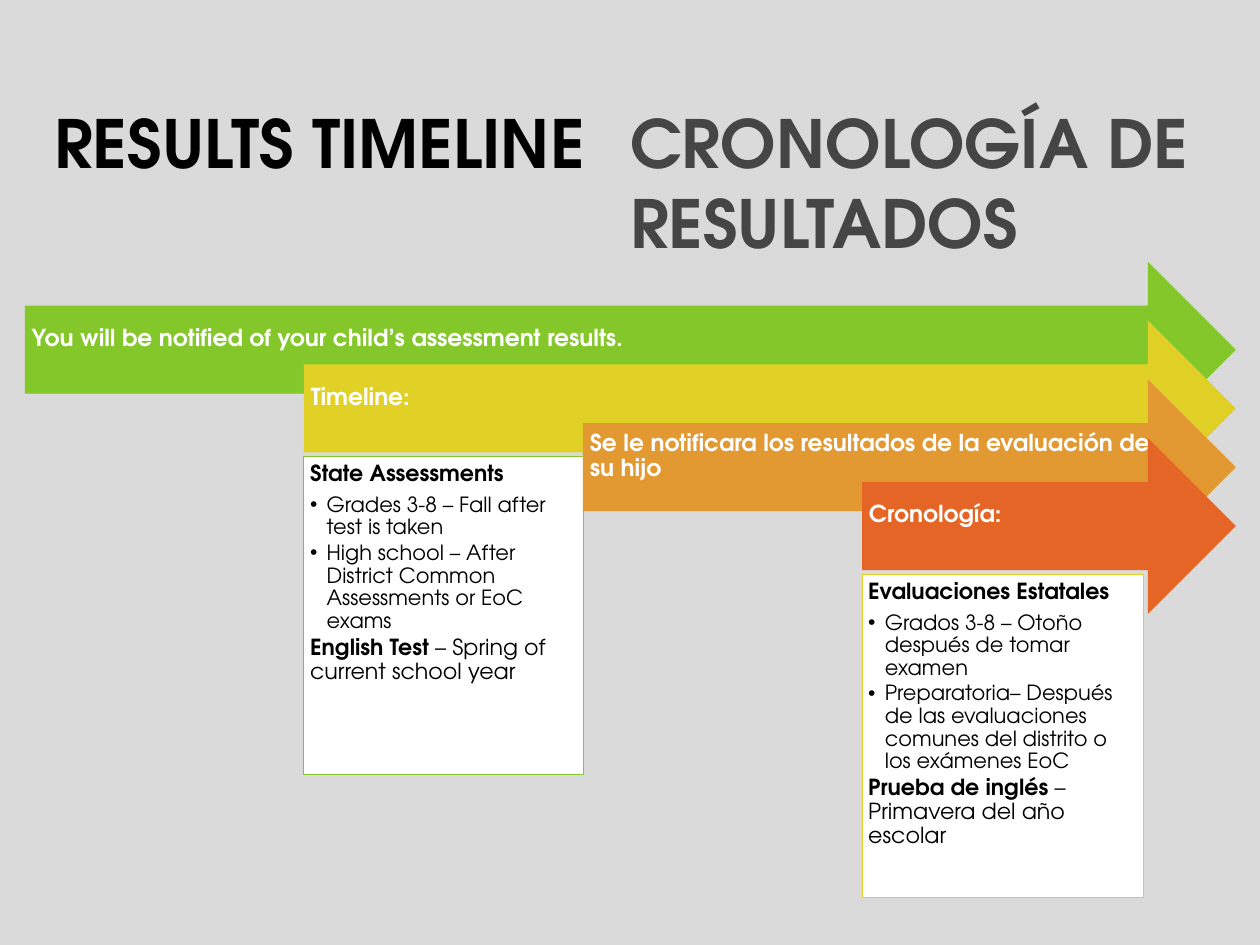
from dataclasses import dataclass

from lxml import etree
from pptx import Presentation
from pptx import util as u
from pptx.dml.color import RGBColor
from pptx.enum import shapes, text
from pptx.oxml import ns

FONT = "TeX Gyre Adventor"
BLACK = RGBColor(0x00, 0x00, 0x00)
GRAY = RGBColor(0x45, 0x45, 0x45)
WHITE = RGBColor(0xFF, 0xFF, 0xFF)
BACKDROP = RGBColor(0xDA, 0xDA, 0xDA)
GREEN = RGBColor(0x84, 0xC7, 0x2A)
YELLOW = RGBColor(0xE1, 0xD1, 0x26)
ORANGE = RGBColor(0xE2, 0x99, 0x32)
RED = RGBColor(0xE5, 0x65, 0x26)

ARROW_LEFT, ARROW_TOP, ARROW_TIP, ARROW_H = 20.2, 212.6, 1004.4, 143.2
STEP_X, STEP_Y = 226.8, 47.75
HEADING_TOP, HEADING_H = 83, 132
HANG = 13.5


@dataclass
class Heading:
    words: str
    color: RGBColor
    left: float
    width: float


@dataclass
class Arrow:
    label: str
    color: RGBColor


@dataclass
class Card:
    step: int
    top: float
    width: float
    height: float
    border: RGBColor
    title: str
    bullets: list[str]
    exam: str
    season: str


HEADINGS = [
    Heading("RESULTS TIMELINE", BLACK, 37, 467.6),
    Heading("CRONOLOGÍA DE RESULTADOS", GRAY, 505, 482),
]
ARROWS = [
    Arrow("You will be notified of your child’s assessment results.", GREEN),
    Arrow("Timeline:", YELLOW),
    Arrow("Se le notificara los resultados de la evaluación de su hijo", ORANGE),
    Arrow("Cronología:", RED),
]
CARDS = [
    Card(1, 370.8, 226.8, 258.5, GREEN, "State Assessments",
         ["Grades 3-8 – Fall after test is taken",
          "High school – After District Common Assessments or EoC exams"],
         "English Test ", "– Spring of current school year"),
    Card(3, 466.6, 229, 262.8, YELLOW, "Evaluaciones Estatales",
         ["Grados 3-8 – Otoño después de tomar examen",
          "Preparatoria– Después de las evaluaciones comunes del distrito o "
          "los exámenes EoC"],
         "Prueba de inglés ", "– Primavera del año escolar"),
]


def place(sp, left: float, top: float, width: float, height: float) -> None:
    sp.left, sp.top = u.Pt(left), u.Pt(top)
    sp.width, sp.height = u.Pt(width), u.Pt(height)


def set_frame(tf, anchor, left: float, top: float, right: float, bottom: float) -> None:
    tf.word_wrap = True
    tf.auto_size = text.MSO_AUTO_SIZE.NONE
    tf.vertical_anchor = anchor
    tf.margin_left, tf.margin_top = u.Pt(left), u.Pt(top)
    tf.margin_right, tf.margin_bottom = u.Pt(right), u.Pt(bottom)


def add_run(p, words: str, size: float, color: RGBColor, bold: bool) -> None:
    r = p.add_run()
    r.text = words
    r.font.name = FONT
    r.font.size = u.Pt(size)
    r.font.bold = bold
    r.font.color.rgb = color


def set_paragraph(p, line: float, after: float) -> None:
    p.alignment = text.PP_ALIGN.LEFT
    p.line_spacing = line
    p.space_before = u.Pt(0)
    p.space_after = u.Pt(after)


def set_bullet(p, char: str) -> None:
    hang = u.Pt(HANG) if char else 0
    pPr = p._p.get_or_add_pPr()
    pPr.set("marL", str(hang))
    pPr.set("indent", str(-hang))
    if char:
        etree.SubElement(pPr, ns.qn("a:buFont")).set("typeface", "Arial")
        etree.SubElement(pPr, ns.qn("a:buChar")).set("char", char)
    else:
        etree.SubElement(pPr, ns.qn("a:buNone"))


def draw_heading(sp, heading: Heading) -> None:
    place(sp, heading.left, HEADING_TOP, heading.width, HEADING_H)
    tf = sp.text_frame
    set_frame(tf, text.MSO_ANCHOR.TOP, 7.2, 0, 0, 0)
    p = tf.paragraphs[0]
    set_paragraph(p, 1.0, 0)
    add_run(p, heading.words, 54, heading.color, True)


def draw_arrow(s, step: int, arrow: Arrow) -> None:
    left = ARROW_LEFT + step * STEP_X
    sp = s.shapes.add_shape(
        shapes.MSO_SHAPE.RIGHT_ARROW, u.Pt(left), u.Pt(ARROW_TOP + step * STEP_Y),
        u.Pt(ARROW_TIP - left), u.Pt(ARROW_H))
    sp.shadow.inherit = False
    sp.fill.solid()
    sp.fill.fore_color.rgb = arrow.color
    sp.line.fill.background()
    tf = sp.text_frame
    set_frame(tf, text.MSO_ANCHOR.MIDDLE, 5.6, 5.6, 20, 22.8)
    p = tf.paragraphs[0]
    set_paragraph(p, 0.9, 6.65)
    add_run(p, arrow.label, 19, WHITE, True)


def draw_card(sp, card: Card) -> None:
    place(sp, ARROW_LEFT + card.step * STEP_X, card.top, card.width, card.height)
    sp.fill.solid()
    sp.fill.fore_color.rgb = WHITE
    sp.line.color.rgb = card.border
    sp.line.width = u.Pt(0.75)
    tf = sp.text_frame
    set_frame(tf, text.MSO_ANCHOR.TOP, 5, 5, 5, 5)
    p = tf.paragraphs[0]
    set_bullet(p, "")
    set_paragraph(p, 0.9, 6.3)
    add_run(p, card.title, 18, BLACK, True)
    for bullet in card.bullets:
        p = tf.add_paragraph()
        set_bullet(p, "•")
        set_paragraph(p, 0.9, 2.55)
        add_run(p, bullet, 17, BLACK, False)
    p = tf.add_paragraph()
    set_bullet(p, "")
    set_paragraph(p, 0.9, 6.3)
    add_run(p, card.exam, 18, BLACK, True)
    add_run(p, card.season, 18, BLACK, False)


def main() -> None:
    prs = Presentation()
    prs.slide_width, prs.slide_height = u.Pt(1024), u.Pt(768)
    s = prs.slides.add_slide(prs.slide_layouts[3])
    s.background.fill.solid()
    s.background.fill.fore_color.rgb = BACKDROP
    title, *bodies = s.placeholders
    subtitle = s.shapes.add_textbox(0, 0, 0, 0)
    for sp, heading in zip((title, subtitle), HEADINGS):
        draw_heading(sp, heading)
    for step, arrow in enumerate(ARROWS):
        draw_arrow(s, step, arrow)
    for sp, card in zip(bodies, CARDS):
        draw_card(sp, card)
    prs.save("out.pptx")


if __name__ == "__main__":
    main()
